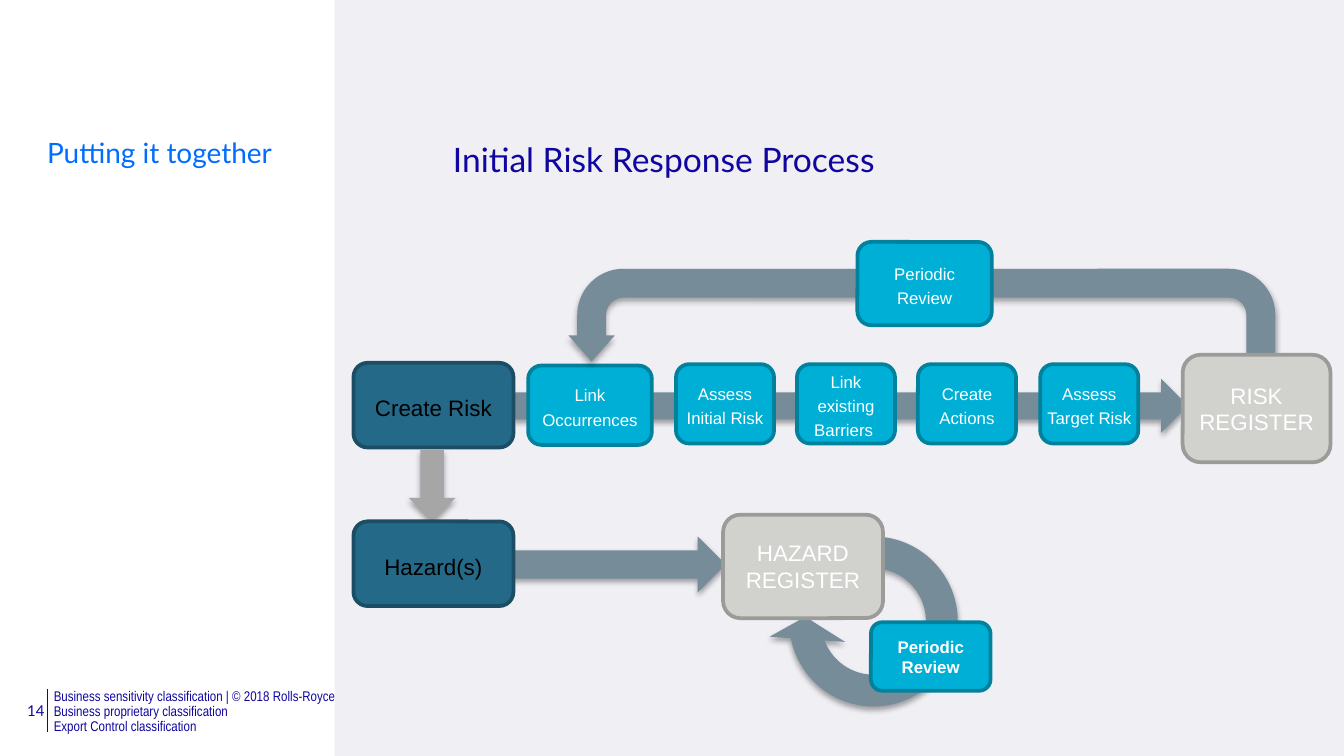
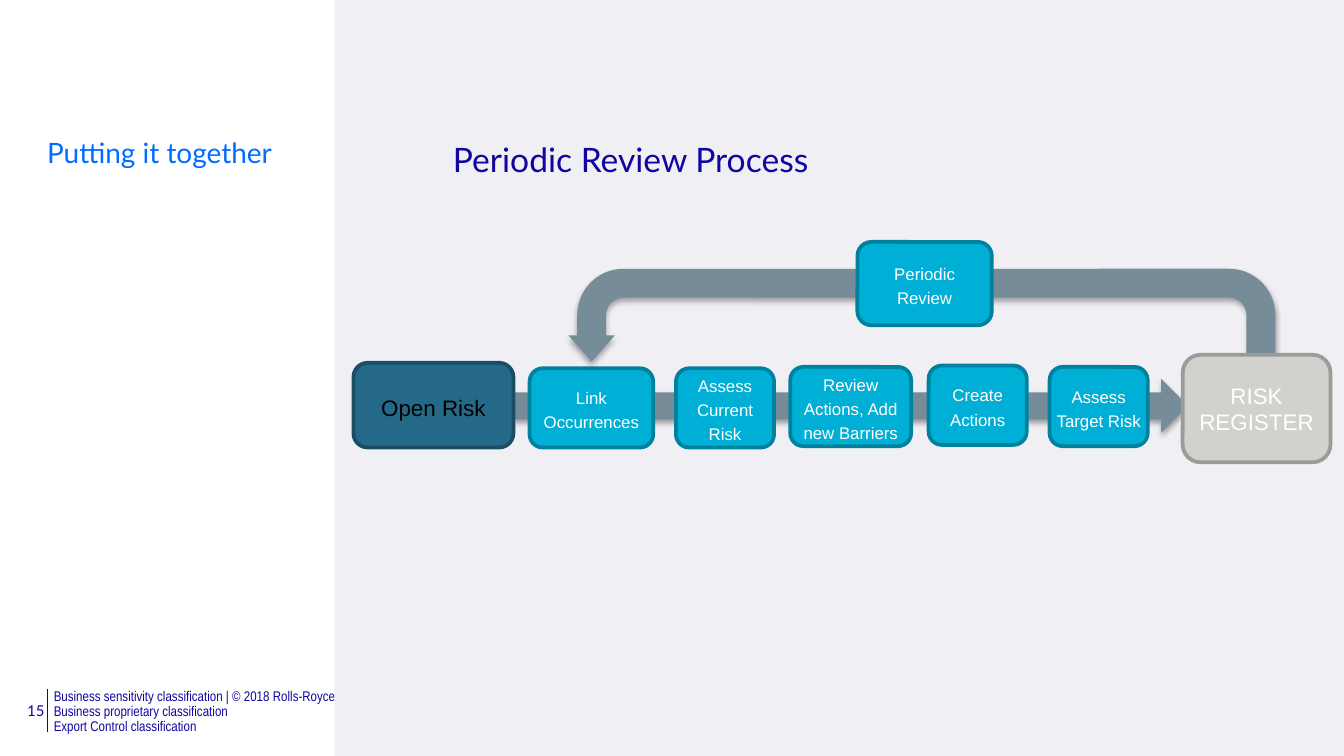
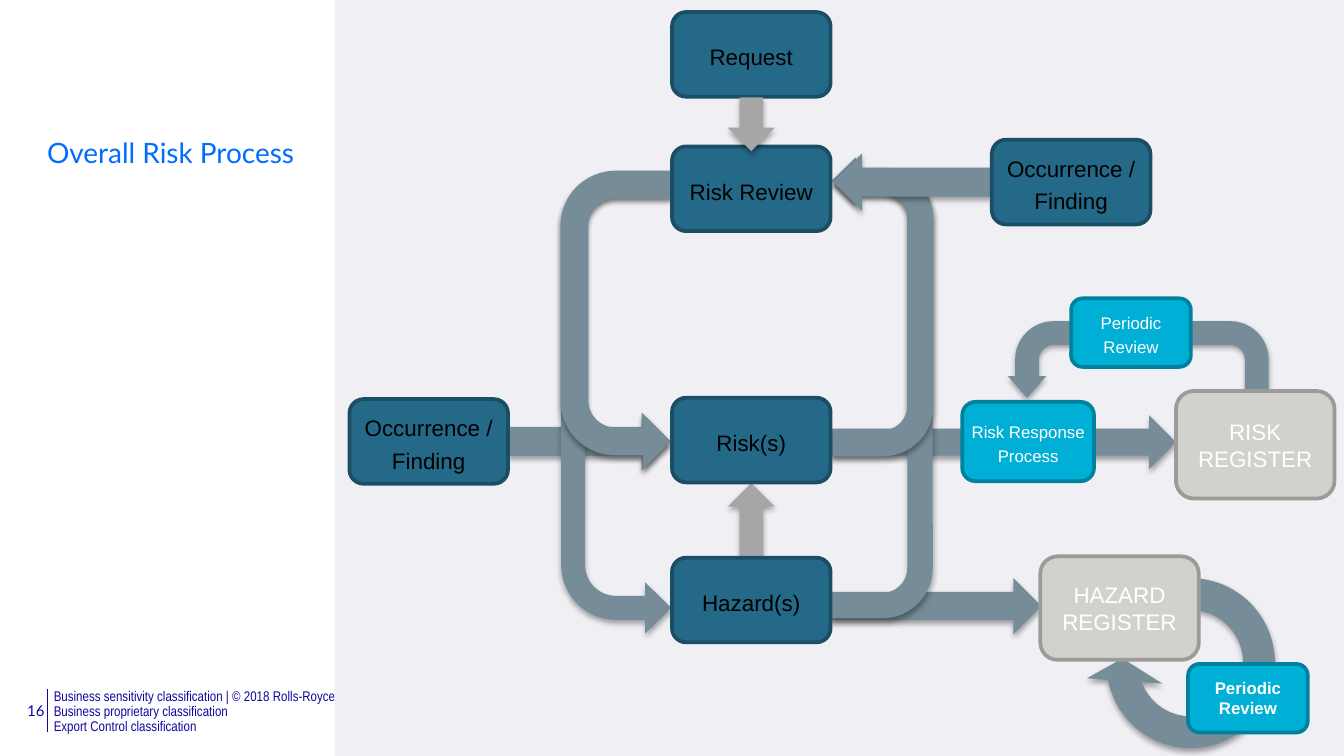
"""Build three slides that show the risk management process as flow diagrams."""
import dataclasses
import typing

import lxml.etree
import pptx
import pptx.dml.color
import pptx.enum.shapes
import pptx.enum.text
import pptx.oxml
import pptx.oxml.ns
import pptx.slide
import pptx.util

Inches = pptx.util.Inches
Preset = pptx.enum.shapes.MSO_SHAPE
Align = pptx.enum.text.PP_ALIGN
Anchor = pptx.enum.text.MSO_ANCHOR


@dataclasses.dataclass(frozen=True)
class Theme:
    navy: str = "10069F"
    blue: str = "006DFF"
    panel: str = "EFEFF4"
    white: str = "FFFFFF"
    black: str = "000000"
    flow: str = "768D99"
    link: str = "A6A6A6"
    step: str = "00AFD5"
    step_line: str = "00819E"
    record: str = "246987"
    record_line: str = "1B4E64"
    register: str = "D1D1CE"
    register_line: str = "9B9B98"
    heading_font: str = "Lato"
    block_font: str = "Arial"
    footer_font: str = "Arial Narrow"
    title_size: float = 18
    topic_size: float = 15
    record_size: float = 12
    step_size: float = 9
    number_size: float = 8
    footer_size: float = 7.5


THEME = Theme()


@dataclasses.dataclass(frozen=True)
class BlockStyle:
    fill: str
    outline: str
    ink: str
    size: float
    side_inset: float = 0.04
    line_spacing: float = 1.2
    bold: bool = False


STEP = BlockStyle(THEME.step, THEME.step_line, THEME.white, THEME.step_size)
TIGHT_STEP = dataclasses.replace(STEP, side_inset=0)
LOOP_STEP = dataclasses.replace(STEP, line_spacing=1, bold=True)
RECORD = BlockStyle(THEME.record, THEME.record_line, THEME.black, THEME.record_size)
REGISTER = BlockStyle(THEME.register, THEME.register_line, THEME.white,
                      THEME.record_size, 0.08, 1)


class Box(typing.NamedTuple):
    left: float
    top: float
    width: float
    height: float

    def lengths(self) -> list[pptx.util.Length]:
        return [Inches(value) for value in self]


@dataclasses.dataclass(frozen=True)
class Block:
    text: str
    box: Box
    style: BlockStyle


@dataclasses.dataclass(frozen=True)
class Arrow:
    box: Box
    rotation: float = 0
    color: str = THEME.flow
    preset: Preset = Preset.RIGHT_ARROW
    adjustments: tuple[float, ...] = ()
    flips: tuple[str, ...] = ()


Item = Block | Arrow


@dataclasses.dataclass(frozen=True)
class Page:
    topic: str
    items: list[Item]
    title: str = ""


SLIDE_WIDTH = 10
SLIDE_HEIGHT = SLIDE_WIDTH * 9 / 16
PANEL_LEFT = 2.49
RIGHT, DOWN, LEFT, UP = 0, 90, 180, 270
FIRST_NUMBER = 14
FOOTER = ("Business sensitivity classification | © 2018 Rolls-Royce "
          "Business proprietary classification \vExport Control classification")
STEP_HEIGHT = 0.59
RECORD_HEIGHT = 0.63
REVIEW_BEND = (0.311, 0.25, 0.282, 0.5, 1)


def uturn(box: Box, adjustments: tuple[float, ...], rotation: float = 0) -> Arrow:
    return Arrow(box, rotation, preset=Preset.U_TURN_ARROW,
                 adjustments=adjustments, flips=("flipH",))


def step(text: str, left: float, top: float, width: float = 0.73,
         style: BlockStyle = TIGHT_STEP) -> Block:
    return Block(text, Box(left, top, width, STEP_HEIGHT), style)


def record(text: str, left: float, top: float, width: float = 1.18) -> Block:
    return Block(text, Box(left, top, width, RECORD_HEIGHT), RECORD)


def hazard_review(left: float, top: float) -> list[Item]:
    return [
        Arrow(Box(left, top, 1.58, 1.59), 4.1, preset=Preset.CIRCULAR_ARROW,
              adjustments=(0.15, 11.423, 204.494, 45.892, 0.178),
              flips=("flipH", "flipV")),
        Block("Periodic Review", Box(left + 0.77, top + 0.8, 0.89, 0.51), LOOP_STEP),
    ]


def risk_line(start: str, steps: list[Block]) -> list[Item]:
    return [
        Arrow(Box(3.82, 2.82, 5.02, 0.4), RIGHT),
        *steps,
        record(start, 2.63, 2.7, 1.19),
        uturn(Box(4.23, 2, 5.26, 0.69), REVIEW_BEND),
        Block("Periodic Review", Box(6.38, 1.8, 1, 0.62), STEP),
        Block("RISK REGISTER", Box(8.8, 2.64, 1.1, 0.8), REGISTER),
    ]


INITIAL_STEPS = [
    step("Assess Initial Risk", 5.03, 2.71, style=STEP),
    step("Link existing Barriers ", 5.93, 2.71),
    step("Link Occurrences", 3.93, 2.72, 0.92, STEP),
    step("Create Actions", 6.83, 2.71),
    step("Assess Target Risk", 7.74, 2.71),
]
REVIEW_STEPS = [
    step("Assess Current Risk", 5.03, 2.74, style=STEP),
    step("Review Actions, Add new Barriers", 5.88, 2.73, 0.9),
    step("Link Occurrences", 3.94, 2.74, 0.92, STEP),
    step("Create Actions", 6.91, 2.72),
    step("Assess Target Risk", 7.81, 2.73),
]
PAGES = [
    Page("Putting it together", [
        *hazard_review(5.71, 3.83),
        Arrow(Box(3.79, 3.99, 1.61, 0.42), RIGHT),
        Arrow(Box(2.95, 3.44, 0.53, 0.35), DOWN, THEME.link),
        *risk_line("Create Risk", INITIAL_STEPS),
        Block("HAZARD REGISTER", Box(5.38, 3.83, 1.19, 0.77), REGISTER),
        record("Hazard(s)", 2.63, 3.88, 1.19),
    ], "Initial Risk Response Process"),
    Page("Putting it together", risk_line("Open Risk", REVIEW_STEPS),
         "Periodic Review Process"),
    Page("Overall Risk Process", [
        *hazard_review(8.07, 4.14),
        Arrow(Box(3.78, 3.07, 1.21, 0.43), RIGHT),
        uturn(Box(2.87, 2.59, 3.43, 0.82), (0.217, 0.233, 0.239, 0.5, 1), 270),
        uturn(Box(3.47, 1.97, 2.22, 0.82), (0.253, 0.25, 0.252, 0.5, 1), 270),
        uturn(Box(7.5, 2.39, 1.94, 0.57), REVIEW_BEND),
        Arrow(Box(6.18, 3.09, 2.57, 0.4), RIGHT),
        Arrow(Box(6.15, 4.3, 1.6, 0.42), RIGHT),
        uturn(Box(4.85, 2.51, 3.43, 0.75), (0.252, 0.233, 0.239, 0.5, 1), 90),
        uturn(Box(5.46, 1.91, 2.22, 0.75), (0.259, 0.233, 0.253, 0.5, 1), 90),
        Arrow(Box(5.3, 3.71, 0.58, 0.35), UP, THEME.link),
        Arrow(Box(6.2, 1.14, 1.18, 0.43), LEFT),
        step("Risk Response Process", 7.16, 2.99, 0.98, STEP),
        Block("RISK REGISTER", Box(8.75, 2.91, 1.18, 0.8), REGISTER),
        record("Request", 5, 0.09),
        record("Occurrence / Finding", 2.6, 2.97),
        Block("HAZARD REGISTER", Box(7.74, 4.14, 1.18, 0.77), REGISTER),
        record("Risk Review", 5, 1.09),
        record("Risk(s)", 5, 2.96),
        record("Hazard(s)", 5, 4.15),
        Block("Periodic Review", Box(7.97, 2.22, 0.89, 0.51), STEP),
        Arrow(Box(5.39, 0.75, 0.4, 0.35), DOWN, THEME.link),
        record("Occurrence / Finding", 7.38, 1.04),
    ]),
]


def rgb(color: str) -> pptx.dml.color.RGBColor:
    return pptx.dml.color.RGBColor.from_string(color)


def write(shape, text: str, font: str, size: float, color: str,
          align: Align = Align.LEFT, line_spacing: float = 1, bold: bool = False,
          insets: tuple[float, float] = (0, 0), anchor: Anchor = Anchor.TOP) -> None:
    frame = shape.text_frame
    frame.word_wrap = True
    frame.auto_size = pptx.enum.text.MSO_AUTO_SIZE.NONE
    frame.vertical_anchor = anchor
    frame.margin_left = frame.margin_right = Inches(insets[0])
    frame.margin_top = frame.margin_bottom = Inches(insets[1])
    paragraph = frame.paragraphs[0]
    paragraph.text = text
    paragraph.alignment = align
    paragraph.line_spacing = line_spacing
    paragraph.space_before = pptx.util.Pt(0)
    paragraph.font.name = font
    paragraph.font.size = pptx.util.Pt(size)
    paragraph.font.bold = bold
    paragraph.font.color.rgb = rgb(color)


def add_filled(slide: pptx.slide.Slide, preset: Preset, box: Box, color: str):
    shape = slide.shapes.add_shape(preset, *box.lengths())
    shape.fill.solid()
    shape.fill.fore_color.rgb = rgb(color)
    shape.line.fill.background()
    shape.shadow.inherit = False
    return shape


def draw_block(slide: pptx.slide.Slide, block: Block) -> None:
    style = block.style
    shape = add_filled(slide, Preset.ROUNDED_RECTANGLE, block.box, style.fill)
    shape.line.color.rgb = rgb(style.outline)
    shape.line.width = pptx.util.Pt(2)
    write(shape, block.text, THEME.block_font, style.size, style.ink, Align.CENTER,
          style.line_spacing, style.bold, (style.side_inset, 0.05), Anchor.MIDDLE)


def draw_arrow(slide: pptx.slide.Slide, arrow: Arrow) -> None:
    shape = add_filled(slide, arrow.preset, arrow.box, arrow.color)
    shape.rotation = arrow.rotation
    for index, value in enumerate(arrow.adjustments):
        shape.adjustments[index] = value
    properties = shape._element.spPr
    for flip in arrow.flips:
        properties.get_or_add_xfrm().set(flip, "1")
    effects = properties.find(pptx.oxml.ns.qn("a:effectLst"))
    effects.append(pptx.oxml.parse_xml(
        f'<a:outerShdw {pptx.oxml.ns.nsdecls("a")} blurRad="{pptx.util.Pt(3.1)}" '
        f'dist="{pptx.util.Pt(1.8)}" dir="5400000" rotWithShape="0">'
        f'<a:srgbClr val="{THEME.black}"><a:alpha val="35000"/></a:srgbClr>'
        '</a:outerShdw>'))


def draw_frame(slide: pptx.slide.Slide, number: int) -> None:
    rule = slide.shapes.add_connector(
        pptx.enum.shapes.MSO_CONNECTOR.STRAIGHT,
        Inches(0.35), Inches(5.13), Inches(0.35), Inches(5.45))
    rule.line.color.rgb = rgb(THEME.navy)
    rule.line.width = pptx.util.Pt(0.5)
    lxml.etree.SubElement(rule._element.spPr, pptx.oxml.ns.qn("a:effectLst"))
    footer = slide.shapes.add_textbox(*Box(0.4, 5.13, 2.22, 0.34).lengths())
    write(footer, FOOTER, THEME.footer_font, THEME.footer_size, THEME.navy,
          line_spacing=0.9)
    panel = Box(PANEL_LEFT, 0, SLIDE_WIDTH - PANEL_LEFT, SLIDE_HEIGHT)
    add_filled(slide, Preset.RECTANGLE, panel, THEME.panel)
    label = slide.shapes.add_textbox(*Box(0.05, 5.17, 0.38, 0.24).lengths())
    write(label, str(number), THEME.heading_font, THEME.number_size, THEME.navy,
          Align.RIGHT, insets=(0.1, 0.05))


def fill_placeholder(slide: pptx.slide.Slide, placeholder, box: Box, text: str,
                     size: float, color: str, insets: tuple[float, float]) -> None:
    slide.shapes._spTree.append(placeholder._element)
    (placeholder.left, placeholder.top,
     placeholder.width, placeholder.height) = box.lengths()
    properties = placeholder.text_frame.paragraphs[0]._p.get_or_add_pPr()
    properties.set("marL", "0")
    properties.set("indent", "0")
    lxml.etree.SubElement(properties, pptx.oxml.ns.qn("a:buNone"))
    write(placeholder, text, THEME.heading_font, size, color,
          line_spacing=0.9, insets=insets)


def draw_page(presentation, page: Page, number: int) -> None:
    slide = presentation.slides.add_slide(presentation.slide_layouts[1])
    title, body = slide.shapes.title, slide.placeholders[1]
    draw_frame(slide, number)
    if page.title:
        fill_placeholder(slide, title, Box(3.37, 1.07, 6.38, 0.4), page.title,
                         THEME.title_size, THEME.navy, (0, 0))
    else:
        slide.shapes._spTree.remove(title._element)
    fill_placeholder(slide, body, Box(0.25, 0.99, 2.04, 1.05), page.topic,
                     THEME.topic_size, THEME.blue, (0.1, 0.05))
    for item in page.items:
        if isinstance(item, Block):
            draw_block(slide, item)
        else:
            draw_arrow(slide, item)


def main() -> None:
    presentation = pptx.Presentation()
    presentation.slide_width = Inches(SLIDE_WIDTH)
    presentation.slide_height = Inches(SLIDE_HEIGHT)
    for number, page in enumerate(PAGES, FIRST_NUMBER):
        draw_page(presentation, page, number)
    presentation.save("out.pptx")


if __name__ == "__main__":
    main()
